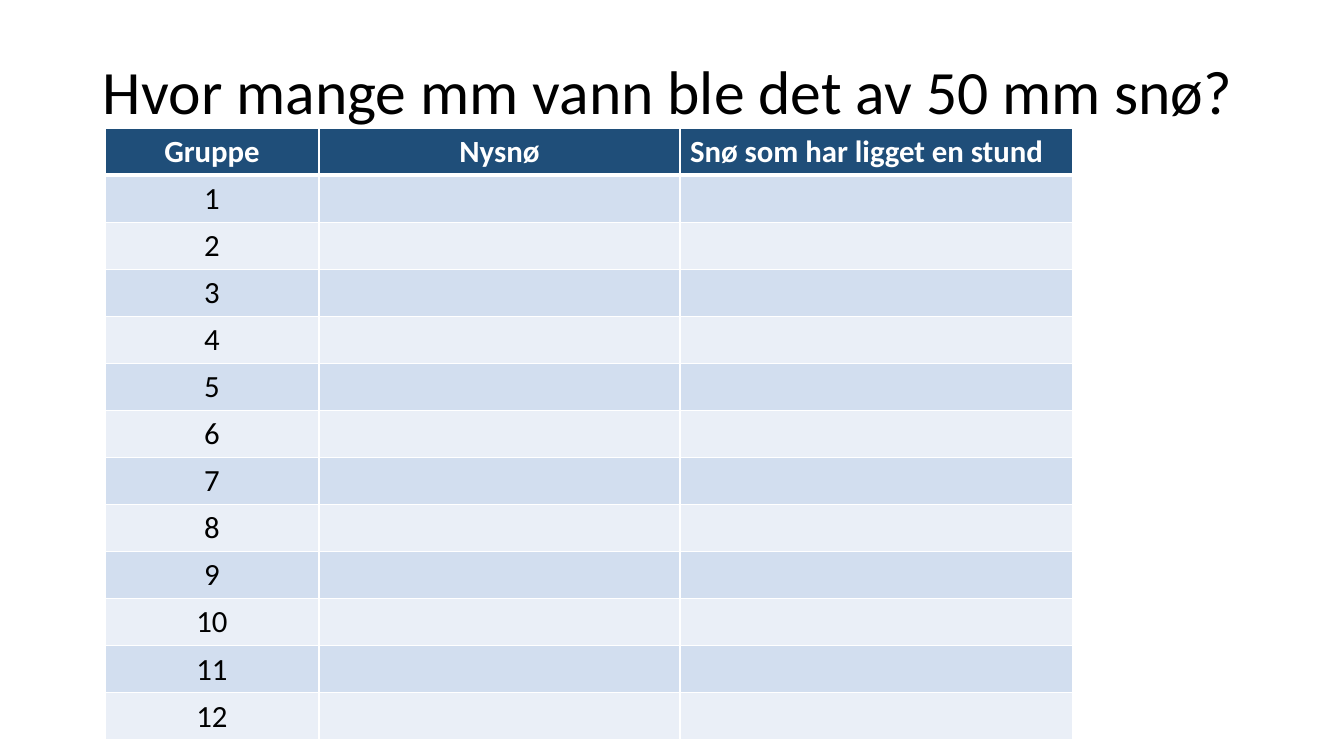
"""Builds a slide with a results table for the snow melting experiment."""
from lxml import etree
from pptx import Presentation
from pptx import util as u
from pptx.dml.color import RGBColor
from pptx.enum import text
from pptx.oxml.ns import qn

TITLE = "Hvor mange mm vann ble det av 50 mm snø?"
HEADERS = ["Gruppe", "Nysnø", "Snø som har ligget en stund"]
HEADER_ALIGNMENTS = [text.PP_ALIGN.CENTER, text.PP_ALIGN.CENTER, text.PP_ALIGN.LEFT]
GROUP_COUNT = 12

SLIDE_SIZE = (1344, 756)
TITLE_BOX = (93, 40, 1159, 109)
TABLE_ORIGIN = (105, 128)
COLUMN_WIDTHS = [214, 361, 393]
ROW_HEIGHT = 47
EMU_PER_PX = 12192000 / 1344

FONT = "Calibri"
WHITE, BLACK, HEADER_FILL = "FFFFFF", "000000", "1F4E79"
BAND_FILLS = ["D2DEEF", "EAEFF7"]


def px(length):
    return u.Emu(round(length * EMU_PER_PX))


def color(value):
    return RGBColor.from_string(value)


def style_font(font, size, value, bold=False):
    font.name, font.size, font.bold = FONT, u.Pt(size), bold
    font.color.rgb = color(value)


def set_borders(cell, widths):
    properties = cell._tc.get_or_add_tcPr()
    for index, (side, width) in enumerate(widths.items()):
        line = etree.Element(qn(f"a:ln{side}"), w=str(u.Pt(width)))
        fill = etree.SubElement(line, qn("a:solidFill"))
        etree.SubElement(fill, qn("a:srgbClr"), val=WHITE)
        properties.insert(index, line)


def add_title(slide):
    box = slide.shapes.add_textbox(*map(px, TITLE_BOX))
    frame = box.text_frame
    frame.word_wrap = True
    frame.vertical_anchor = text.MSO_ANCHOR.MIDDLE
    frame.text = TITLE
    paragraph = frame.paragraphs[0]
    paragraph.line_spacing = 0.9
    style_font(paragraph.runs[0].font, 44, BLACK)


def add_results_table(slide):
    rows = [HEADERS] + [[str(group), "", ""] for group in range(1, GROUP_COUNT + 1)]
    size = (sum(COLUMN_WIDTHS), ROW_HEIGHT * len(rows))
    table = slide.shapes.add_table(
        len(rows), len(HEADERS), *map(px, TABLE_ORIGIN + size)).table
    for column, width in zip(table.columns, COLUMN_WIDTHS):
        column.width = px(width)
    for row_index, values in enumerate(rows):
        table.rows[row_index].height = px(ROW_HEIGHT)
        is_header = row_index == 0
        fill = HEADER_FILL if is_header else BAND_FILLS[(row_index - 1) % 2]
        top = 3 if row_index == 1 else 1
        bottom = 3 if is_header else 1
        for column_index, value in enumerate(values):
            cell = table.cell(row_index, column_index)
            cell.fill.solid()
            cell.fill.fore_color.rgb = color(fill)
            set_borders(cell, {"L": 1, "R": 1, "T": top, "B": bottom})
            cell.text = value
            paragraph = cell.text_frame.paragraphs[0]
            paragraph.alignment = (
                HEADER_ALIGNMENTS[column_index] if is_header else text.PP_ALIGN.CENTER)
            for run in paragraph.runs:
                style_font(run.font, 22, WHITE if is_header else BLACK, is_header)


def main():
    presentation = Presentation()
    presentation.slide_width, presentation.slide_height = map(px, SLIDE_SIZE)
    slide = presentation.slides.add_slide(presentation.slide_layouts[6])
    add_title(slide)
    add_results_table(slide)
    presentation.save("out.pptx")


if __name__ == "__main__":
    main()
